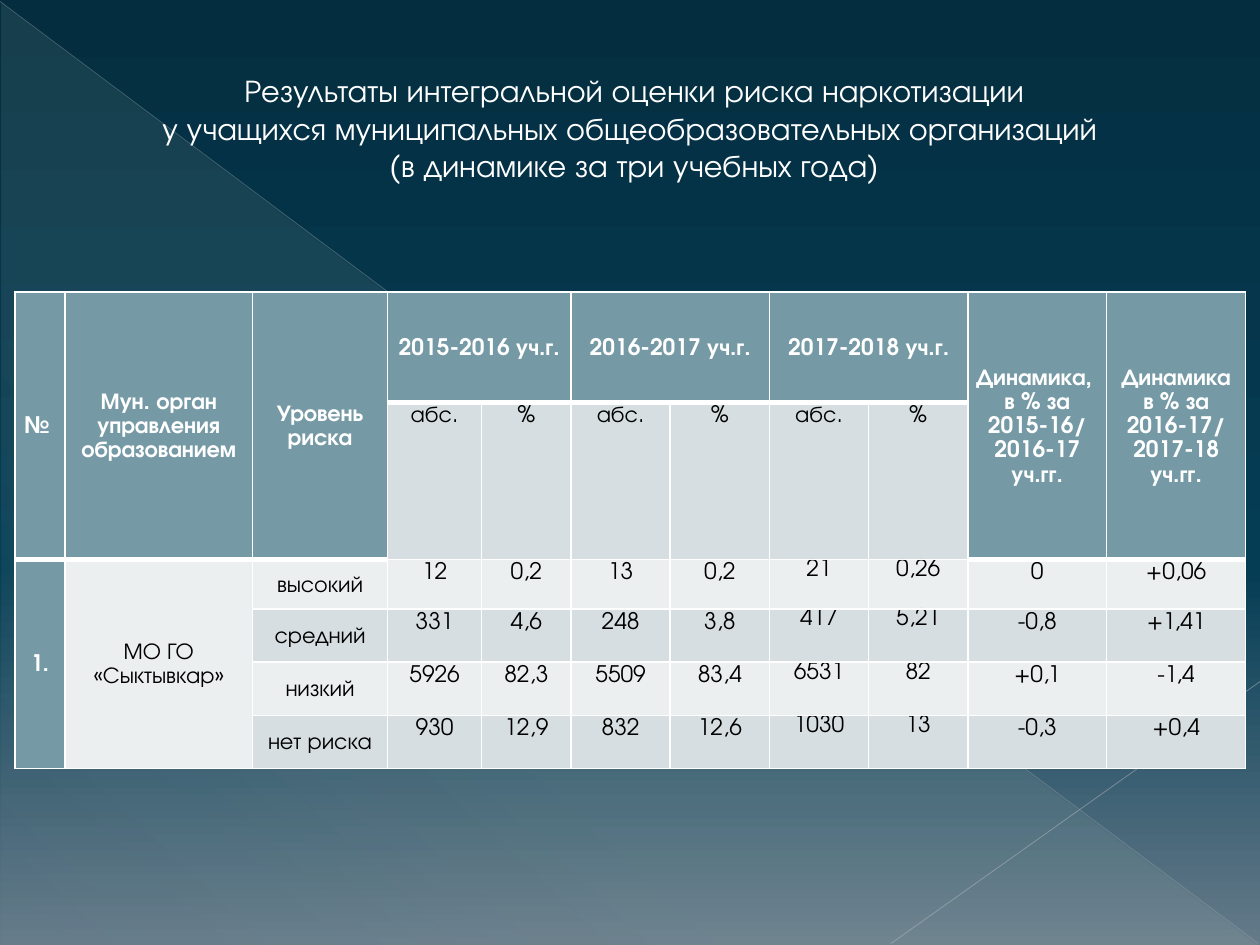
from lxml.etree import SubElement
from pptx import Presentation
from pptx.dml.color import RGBColor
from pptx.enum.shapes import MSO_CONNECTOR, MSO_SHAPE
from pptx.enum.text import MSO_ANCHOR, MSO_AUTO_SIZE, PP_ALIGN
from pptx.oxml.ns import qn
from pptx.util import Cm, Pt

FONT = "TeX Gyre Adventor"
WHITE, BLACK = "FFFFFF", "000000"
HEADER, BAND_DARK, BAND_LIGHT = "759AA5", "D6DEE1", "ECEFF0"

TITLE = (
    "Результаты интегральной оценки риска наркотизации\n"
    "у учащихся муниципальных общеобразовательных организаций \n"
    "(в динамике за три учебных года)"
)
COLUMN_WIDTHS = [1.01, 3.78, 2.72, 1.9, 1.8, 2, 2, 2, 2, 2.8, 2.8]
ROW_HEIGHTS = [2.22, 3.17, 1, 1.07, 1.07, 1.07]
YEAR_COLUMNS = range(3, 9)
LATEST_COLUMNS = (7, 8)
ROWS = [
    ["№ ", "Мун. орган управления образованием", "Уровень\nриска",
     "2015-2016 уч.г.", "", "2016-2017 уч.г.", "", "2017-2018 уч.г.", "",
     "Динамика, \nв % за 2015-16/\n2016-17 уч.гг.",
     "Динамика в % за 2016-17/\n2017-18 уч.гг."],
    ["", "", "", *["абс.", "%"] * 3, "", ""],
    ["1.", "МО ГО «Сыктывкар»", "высокий",
     "12", "0,2", "13", "0,2", "21", "0,26", "0", "+0,06"],
    ["", "", "средний",
     "331", "4,6", "248", "3,8", "417", "5,21", "-0,8", "+1,41"],
    ["", "", "низкий",
     "5926", "82,3", "5509", "83,4", "6531", "82", "+0,1", "-1,4"],
    ["", "", "нет риска",
     "930", "12,9", "832", "12,6", "1030", "13", "-0,3", "+0,4"],
]


def color(value):
    return RGBColor.from_string(value)


def set_gradient(fill, owner, stops, angle):
    """Fill with stops of (position %, colour, opacity %)."""
    fill.gradient()
    gradient = owner.find(".//" + qn("a:gradFill"))
    stop_list = gradient.find(qn("a:gsLst"))
    for stop in list(stop_list):
        stop_list.remove(stop)
    for position, value, opacity in stops:
        stop = SubElement(stop_list, qn("a:gs"), pos=str(position * 1000))
        tint = SubElement(stop, qn("a:srgbClr"), val=value)
        SubElement(tint, qn("a:alpha"), val=str(opacity * 1000))
    gradient.find(qn("a:lin")).set("ang", str(angle * 60000))


def add_triangle(page):
    triangle = page.shapes.add_shape(
        MSO_SHAPE.RIGHT_TRIANGLE, Cm(0.03), Cm(0.05), Cm(25.35), Cm(19))
    triangle.shadow.inherit = False
    triangle.line.fill.background()
    stops = [(0, "DFE6D0", 10), (70, "DFE6D0", 8), (100, "DFE6D0", 1)]
    set_gradient(triangle.fill, triangle._element, stops, 133)


def add_thin_line(page, start, end, value, width, opacity):
    line = page.shapes.add_connector(
        MSO_CONNECTOR.STRAIGHT, *map(Cm, start + end))
    line.line.color.rgb = color(value)
    line.line.width = Pt(width)
    properties = line._element.spPr
    tint = properties.find(".//" + qn("a:srgbClr"))
    SubElement(tint, qn("a:alpha"), val=str(opacity * 1000))
    SubElement(properties, qn("a:effectLst"))


def format_paragraphs(frame, size, value, bold, spacing):
    for para in frame.paragraphs:
        para.alignment = PP_ALIGN.CENTER
        para.line_spacing = spacing
        para.font.name = FONT
        para.font.size = Pt(size)
        para.font.bold = bold
        para.font.color.rgb = color(value)


def add_title(page):
    title = page.shapes.title
    title.left, title.top = Cm(2.49), Cm(1.32)
    title.width, title.height = Cm(20.6), Cm(3.33)
    frame = title.text_frame
    frame.text = TITLE
    frame.word_wrap = True
    frame.auto_size = MSO_AUTO_SIZE.NONE
    frame.vertical_anchor = MSO_ANCHOR.TOP
    format_paragraphs(frame, 18, WHITE, False, Pt(21.4))
    # Keep the title in front of the decoration
    page.shapes._spTree.append(title._element)


def set_borders(cell, widths):
    properties = cell._tc.get_or_add_tcPr()
    for index, (side, width) in enumerate(widths.items()):
        line = properties.makeelement(qn("a:" + side), {"w": str(Pt(width))})
        fill = SubElement(line, qn("a:solidFill"))
        SubElement(fill, qn("a:srgbClr"), val=WHITE)
        properties.insert(index, line)


def is_header(row, column):
    return (row == 0 or column == 0
            or row == 1 and column not in YEAR_COLUMNS)


def border_below(row, column):
    return 3 if row in (0, 1) and is_header(row, column) else 1


def format_cell(cell, row, column):
    header = is_header(row, column)
    frame = cell.text_frame
    frame.text = ROWS[row][column]
    centred = header or column < 3
    cell.vertical_anchor = MSO_ANCHOR.MIDDLE if centred else MSO_ANCHOR.TOP
    cell.margin_left = cell.margin_right = Cm(0.13)
    cell.margin_top = cell.margin_bottom = 0
    single = row > 1 and column in LATEST_COLUMNS
    format_paragraphs(frame, 13, WHITE if header else BLACK, header,
                      1.0 if single else 1.15)
    band = BAND_DARK if row % 2 else BAND_LIGHT
    cell.fill.solid()
    cell.fill.fore_color.rgb = color(HEADER if header else band)
    set_borders(cell, {"lnL": 1, "lnR": 1,
                       "lnT": border_below(row - 1, column),
                       "lnB": border_below(row, column)})


def add_risk_table(page):
    table = page.shapes.add_table(
        len(ROW_HEIGHTS), len(COLUMN_WIDTHS), Cm(0.3), Cm(5.89),
        Cm(sum(COLUMN_WIDTHS)), Cm(sum(ROW_HEIGHTS))).table
    table.first_row = table.horz_banding = False
    for column, width in zip(table.columns, COLUMN_WIDTHS):
        column.width = Cm(width)
    for row, height in zip(table.rows, ROW_HEIGHTS):
        row.height = Cm(height)
    for row in range(len(ROW_HEIGHTS)):
        for column in range(len(COLUMN_WIDTHS)):
            format_cell(table.cell(row, column), row, column)
    # Merged headings and the two cells of the district
    for column in (0, 1, 2, 9, 10):
        table.cell(0, column).merge(table.cell(1, column))
    for column in YEAR_COLUMNS[::2]:
        table.cell(0, column).merge(table.cell(0, column + 1))
    for column in (0, 1):
        table.cell(2, column).merge(table.cell(5, column))


def main():
    deck = Presentation()
    deck.slide_width, deck.slide_height = Cm(25.4), Cm(19.05)
    page = deck.slides.add_slide(deck.slide_layouts[5])
    # Background and decoration
    stops = [(0, "042E40", 100), (60, "053D55", 100), (100, "647A89", 100)]
    set_gradient(page.background.fill, page._element, stops, 90)
    add_triangle(page)
    add_thin_line(page, (0, 0.03), (25.37, 19.02), "B3B7BA", 0.39, 35)
    add_thin_line(page, (25.4, 13.74), (17.96, 19.02), "BCBFC2", 0.47, 45)
    # Content
    add_title(page)
    add_risk_table(page)
    deck.save("out.pptx")


if __name__ == "__main__":
    main()
